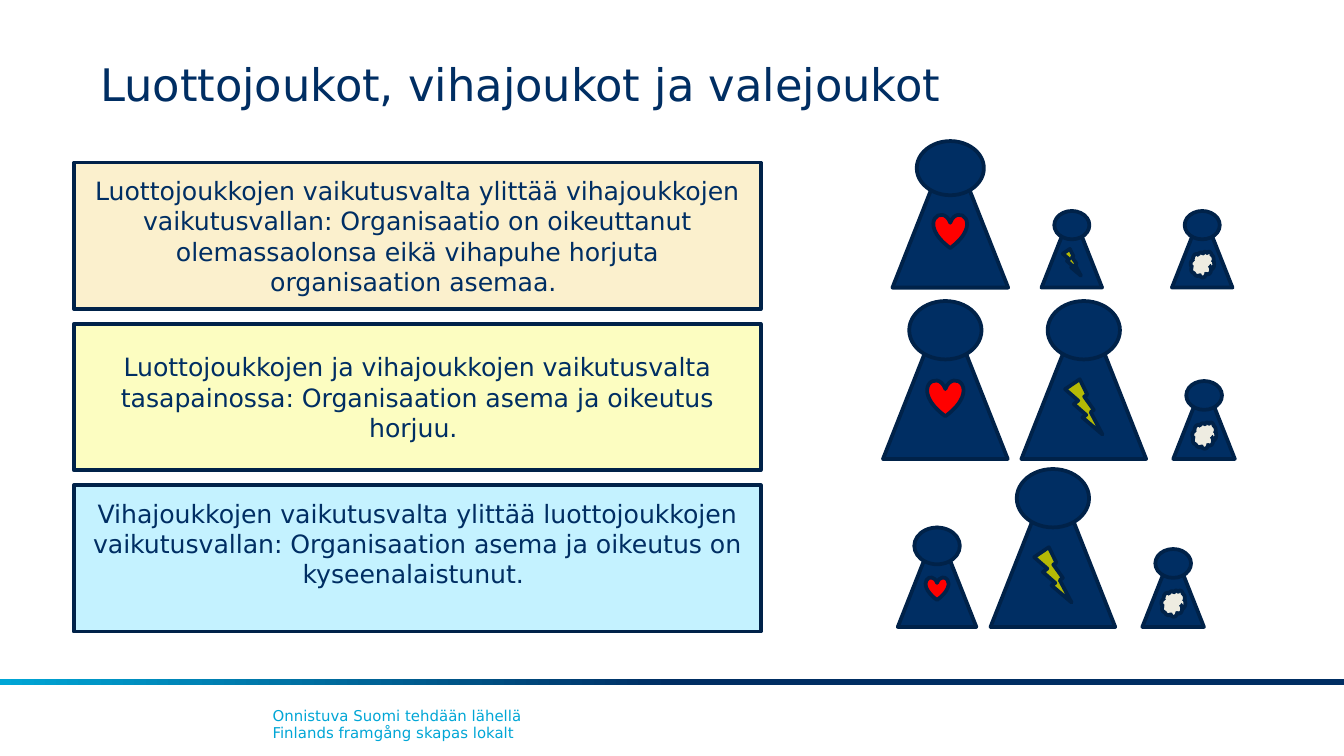
"""Build the slide on trust, hate and fake groups with boxes and pawn figures."""
from pptx import Presentation
from pptx import util as u
from pptx.dml.color import RGBColor
from pptx.enum import shapes, text

NAVY = RGBColor(0x00, 0x2E, 0x63)
OUTLINE = RGBColor(0x00, 0x22, 0x49)
CYAN = RGBColor(0x00, 0xA6, 0xD6)
RED = RGBColor(0xFF, 0x00, 0x00)
OLIVE = RGBColor(0xB5, 0xBA, 0x05)
IVORY = RGBColor(0xEE, 0xEC, 0xE1)
SAND = RGBColor(0xFB, 0xF0, 0xCD)
YELLOW = RGBColor(0xFC, 0xFD, 0xC1)
ICE = RGBColor(0xC4, 0xF2, 0xFF)

FONT = "DejaVu Sans"
CELL = u.Inches(0.1)
KIND = shapes.MSO_SHAPE
HEART = (KIND.HEART, RED, 0.355, 0.5, 0.29, 0.23)
BOLT = (KIND.LIGHTNING_BOLT, OLIVE, 0.35, 0.495, 0.3, 0.35)
CLOUD = (KIND.CLOUD, IVORY, 0.31, 0.53, 0.39, 0.34)

BOXES = [
    ("Luottojoukkojen vaikutusvalta ylittää vihajoukkojen vaikutusvallan: Organisaatio on "
     "oikeuttanut olemassaolonsa eikä vihapuhe horjuta organisaation asemaa. ", SAND, 0.5),
    ("Luottojoukkojen ja vihajoukkojen vaikutusvalta tasapainossa: Organisaation asema ja "
     "oikeutus horjuu. ", YELLOW, 0.5),
    ("Vihajoukkojen vaikutusvalta ylittää luottojoukkojen vaikutusvallan: Organisaation asema "
     "ja oikeutus on kyseenalaistunut. ", ICE, 2.7),
]
PAWN_ROWS = [
    (21.4, [(66.4, 10.9, HEART), (77.5, 5.7, BOLT), (87.2, 5.7, CLOUD)]),
    (34.15, [(65.7, 11.75, HEART), (76, 11.75, BOLT), (87.3, 5.8, CLOUD)]),
    (46.65, [(66.8, 7.4, HEART), (73.7, 11.75, BOLT), (85, 5.8, CLOUD)]),
]


def grid(*cells):
    """Turn grid columns and rows into lengths."""
    return [round(c * CELL) for c in cells]


def write(tf, words, size, color=NAVY, align=text.PP_ALIGN.LEFT,
          anchor=text.MSO_ANCHOR.TOP, insets=(1, 0.5, 1, 0.5)):
    """Fill a text frame with formatted text."""
    tf.word_wrap = True
    tf.vertical_anchor = anchor
    tf.margin_left, tf.margin_top, tf.margin_right, tf.margin_bottom = grid(*insets)
    p = tf.paragraphs[0]
    p.text = words
    p.alignment = align
    for r in p.runs:
        r.font.name, r.font.size = FONT, u.Pt(size)
        r.font.color.rgb = color


class Deck:
    """Hold the style and the current slide."""

    def __init__(self, prs):
        """Add a blank slide to the presentation."""
        self.s = prs.slides.add_slide(prs.slide_layouts[6])
        self.line_width = u.Pt(2)

    def shape(self, parent, kind, at, fill):
        """Add an outlined shape to the slide or a group."""
        sp = parent.add_shape(kind, *grid(*at))
        sp.shadow.inherit = False
        sp.fill.solid()
        sp.fill.fore_color.rgb = fill
        sp.line.color.rgb = OUTLINE
        sp.line.width = self.line_width
        return sp

    def label(self, at, words, size, **style):
        """Add a text box."""
        write(self.s.shapes.add_textbox(*grid(*at)).text_frame, words, size, **style)

    def band(self, at):
        """Add the gradient band above the footer."""
        sp = self.s.shapes.add_shape(KIND.RECTANGLE, *grid(*at))
        sp.shadow.inherit = False
        sp.line.fill.background()
        sp.fill.gradient()
        sp.fill.gradient_angle = 180
        for stop, position, color in zip(sp.fill.gradient_stops, (0.5, 1), (NAVY, CYAN)):
            stop.position = position
            stop.color.rgb = color

    def box(self, at, words, fill, bottom):
        """Add a statement box."""
        sp = self.shape(self.s.shapes, KIND.RECTANGLE, at, fill)
        write(sp.text_frame, words, 13.5, align=text.PP_ALIGN.CENTER,
              anchor=text.MSO_ANCHOR.MIDDLE, insets=(1, 0.5, 1, bottom))

    def pawn(self, group, left, base, height, emblem):
        """Add a pawn whose parts scale with its height."""
        width, top = 0.79 * height, base - height
        kind, color, *mark = emblem
        parts = [(KIND.FLOWCHART_EXTRACT, NAVY, 0, 0, 1, 1),
                 (KIND.FLOWCHART_CONNECTOR, NAVY, 0.21, 0, 0.58, 0.37),
                 (kind, color, *mark)]
        for part, fill, x, y, w, h in parts:
            at = (left + x * width, top + y * height, w * width, h * height)
            self.shape(group.shapes, part, at, fill)

    def pawn_row(self, base, pawns):
        """Add a group of pawns standing on one base line."""
        group = self.s.shapes.add_group_shape()
        for left, height, emblem in pawns:
            self.pawn(group, left, base, height, emblem)


def main():
    """Build and save the slide."""
    prs = Presentation()
    prs.slide_width, prs.slide_height = grid(100, 56.25)
    deck = Deck(prs)
    deck.band((0, 50.5, 100, 0.5))
    deck.label((19.3, 52.05, 65.4, 3.7),
               "Onnistuva Suomi tehdään lähellä\vFinlands framgång skapas lokalt", 8, color=CYAN)
    deck.label((7.45, 3.7, 75.5, 9.4), "Luottojoukot, vihajoukot ja valejoukot", 24,
               insets=(0, 0.5, 0, 0.5))
    for base, pawns in PAWN_ROWS:
        deck.pawn_row(base, pawns)
    for i, (words, fill, bottom) in enumerate(BOXES):
        deck.box((5.5, 12.1 + 12 * i, 51.1, 10.9), words, fill, bottom)
    prs.save("out.pptx")


if __name__ == "__main__":
    main()
